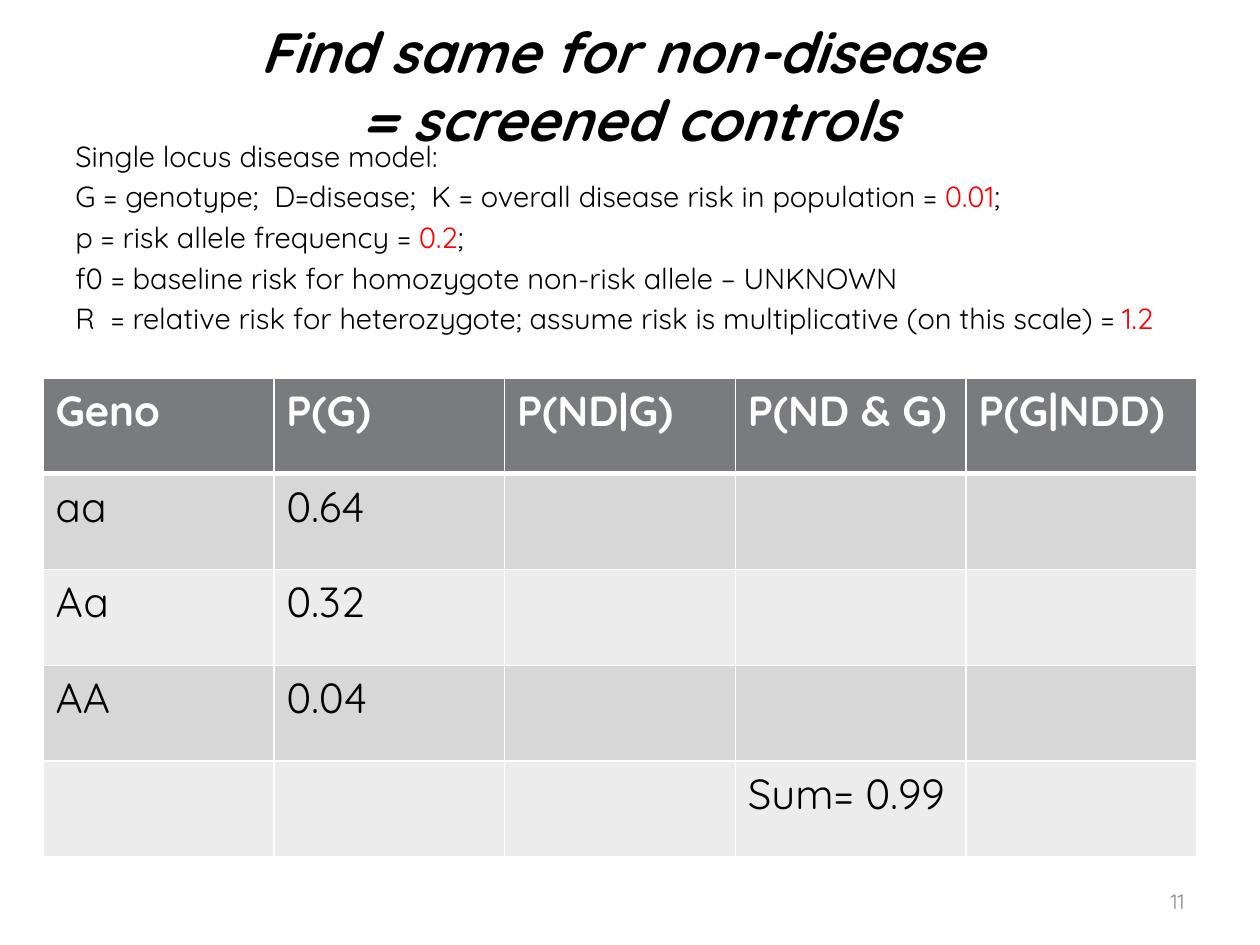
from dataclasses import dataclass

from lxml import etree
from pptx import Presentation
from pptx.dml.color import RGBColor
from pptx.enum.text import MSO_ANCHOR, PP_ALIGN
from pptx.oxml.ns import qn
from pptx.util import Emu, Inches, Pt

LEFT, CENTER, RIGHT = PP_ALIGN.LEFT, PP_ALIGN.CENTER, PP_ALIGN.RIGHT
TOP, MIDDLE = MSO_ANCHOR.TOP, MSO_ANCHOR.MIDDLE
PX_PER_INCH = 126


@dataclass(frozen=True)
class Theme:
    font: str = "Quicksand"
    ink: str = "000000"
    value: str = "FF0000"
    page_number: str = "8C8C8C"
    paper: str = "FFFFFF"
    header: str = "797B7E"
    bands: tuple[str, str] = ("D7D7D8", "ECECEC")
    title_size: float = 32.4
    body_size: float = 16.6
    table_size: float = 24
    page_number_size: float = 12
    paragraph_gap: float = 3.3


THEME = Theme()


@dataclass(frozen=True)
class Box:
    left: int
    top: int
    width: int
    height: int

    def emu(self) -> list[Emu]:
        return [px(n) for n in (self.left, self.top, self.width, self.height)]


@dataclass(frozen=True)
class Line:
    """A line of text whose optional value stands out in colour."""
    lead: str
    value: str = ""
    tail: str = ""


@dataclass(frozen=True)
class TextBlock:
    box: Box
    lines: tuple[Line, ...]
    size: float
    color: str = THEME.ink
    align: PP_ALIGN = LEFT
    anchor: MSO_ANCHOR = TOP
    bold: bool = False
    italic: bool = False


TEXT_BLOCKS = (
    TextBlock(Box(63, 38, 1134, 94),
              (Line("Find same for non-disease \v= screened controls"),),
              THEME.title_size, align=CENTER, anchor=MIDDLE, bold=True, italic=True),
    TextBlock(Box(903, 876, 294, 50), (Line("11"),), THEME.page_number_size,
              THEME.page_number, RIGHT, MIDDLE),
    TextBlock(Box(63, 132, 1183, 246), (
        Line("Single locus disease model:"),
        Line("G = genotype;  D=disease;  K = overall disease risk in population = ", "0.01", ";"),
        Line("p = risk allele frequency = ", "0.2", ";"),
        Line("f0 = baseline risk for homozygote non-risk allele – UNKNOWN"),
        Line("R  = relative risk for heterozygote; assume risk is multiplicative"
             " (on this scale) = ", "1.2"),
    ), THEME.body_size),
)

GENOTYPE_BOX = Box(43, 378, 1154, 479)
GENOTYPE_ROWS = (
    ("Geno", "P(G)", "P(ND|G)", "P(ND & G)", "P(G|NDD)"),
    ("aa", "0.64", "", "", ""),
    ("Aa", "0.32", "", "", ""),
    ("AA", "0.04", "", "", ""),
    ("", "", "", "Sum= 0.99", ""),
)


def px(n: int) -> Emu:
    return Emu(round(n * Inches(1) / PX_PER_INCH))


def set_font(font, size: float, color: str, bold=False, italic=False) -> None:
    font.name, font.size = THEME.font, Pt(size)
    font.bold, font.italic = bold, italic
    font.color.rgb = RGBColor.from_string(color)


def add_text(slide, block: TextBlock) -> None:
    frame = slide.shapes.add_textbox(*block.box.emu()).text_frame
    frame.word_wrap = True
    frame.vertical_anchor = block.anchor
    for i, line in enumerate(block.lines):
        paragraph = frame.add_paragraph() if i else frame.paragraphs[0]
        paragraph.text = line.lead
        paragraph.alignment = block.align
        if i:
            paragraph.space_before = Pt(THEME.paragraph_gap)
        set_font(paragraph.font, block.size, block.color, block.bold, block.italic)
        for text, color in ((line.value, THEME.value), (line.tail, block.color)):
            if text:
                run = paragraph.add_run()
                run.text = text
                run.font.color.rgb = RGBColor.from_string(color)


def set_borders(cell, bottom: int, top: int) -> None:
    """Draw paper-coloured borders; bottom and top widths are in points."""
    properties = cell._tc.get_or_add_tcPr()
    widths = {"a:lnL": 1, "a:lnR": 1, "a:lnT": top, "a:lnB": bottom}
    for i, (tag, width) in enumerate(widths.items()):
        border = etree.Element(qn(tag), w=str(Pt(width)))
        fill = etree.SubElement(border, qn("a:solidFill"))
        etree.SubElement(fill, qn("a:srgbClr"), val=THEME.paper)
        properties.insert(i, border)


def add_genotype_table(slide) -> None:
    rows, columns = len(GENOTYPE_ROWS), len(GENOTYPE_ROWS[0])
    table = slide.shapes.add_table(rows, columns, *GENOTYPE_BOX.emu()).table
    for r, row in enumerate(GENOTYPE_ROWS):
        is_header = r == 0
        fill = THEME.header if is_header else THEME.bands[(r - 1) % 2]
        for c, text in enumerate(row):
            cell = table.cell(r, c)
            cell.text = text
            cell.fill.solid()
            cell.fill.fore_color.rgb = RGBColor.from_string(fill)
            set_font(cell.text_frame.paragraphs[0].font, THEME.table_size,
                     THEME.paper if is_header else THEME.ink, bold=is_header)
            set_borders(cell, bottom=3 if is_header else 1, top=3 if r == 1 else 1)


def main() -> None:
    deck = Presentation()
    deck.slide_width, deck.slide_height = px(1260), px(945)
    slide = deck.slides.add_slide(deck.slide_layouts[6])
    for block in TEXT_BLOCKS:
        add_text(slide, block)
    add_genotype_table(slide)
    deck.save("out.pptx")


if __name__ == "__main__":
    main()
